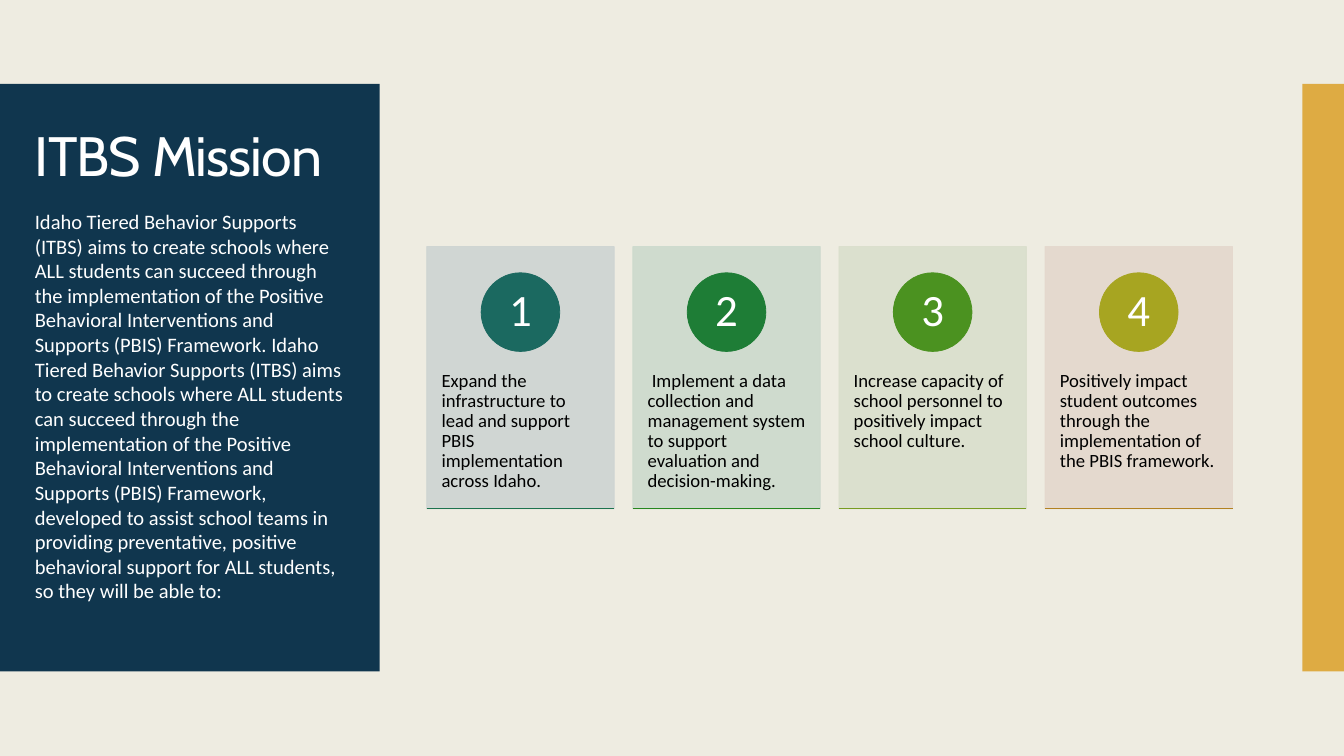
from dataclasses import dataclass

from lxml import etree
from pptx import Presentation
from pptx.dml.color import RGBColor
from pptx.enum.shapes import MSO_CONNECTOR, MSO_SHAPE
from pptx.enum.text import MSO_ANCHOR, PP_ALIGN
from pptx.oxml.ns import qn
from pptx.util import Inches, Pt

RECT, OVAL = MSO_SHAPE.RECTANGLE, MSO_SHAPE.OVAL
LINE = MSO_CONNECTOR.STRAIGHT
TOP, MID, LOW = MSO_ANCHOR.TOP, MSO_ANCHOR.MIDDLE, MSO_ANCHOR.BOTTOM
LEFT, MIDDLE = PP_ALIGN.LEFT, PP_ALIGN.CENTER

WIDE, HIGH = 20, 11.25
HEX = {"paper": "EEECE1", "navy": "10364E", "gold": "DEAB43",
       "white": "FFFFFF", "black": "000000"}

# Card grid: one row of equal columns
START, STEP, CARD_W = 6.35, 3.067, 2.79
CARD_Y, CARD_H = 3.67, 3.9
DISC, LABEL = 1.17, 0.83


@dataclass
class Box:
    x: float
    y: float
    w: float
    h: float

    def emu(self) -> list:
        return [Inches(n) for n in (self.x, self.y, self.w, self.h)]


@dataclass
class Font:
    size: float
    color: str
    face: str = "Calibri"


@dataclass
class Card:
    text: str
    back: str
    disc: str
    rule: str


CARDS = [
    Card("Expand the infrastructure to lead and support PBIS implementation "
         "across Idaho.", "CDD4D2", "1B6960", "1C734E"),
    Card(" Implement a data collection and management system to support "
         "evaluation and decision-making.", "CCDACD", "1E7D36", "26871F"),
    Card("Increase capacity of school personnel to positively impact school "
         "culture.", "DADFCC", "4B9220", "779C21"),
    Card("Positively impact student outcomes through the implementation of "
         "the PBIS framework.", "E4D8CD", "A7A521", "B28222"),
]

AIM = ("Idaho Tiered Behavior Supports (ITBS) aims to create schools where "
       "ALL students can succeed through the implementation of the Positive "
       "Behavioral Interventions and Supports (PBIS) Framework")
BODY = (f"{AIM}. {AIM}, developed to assist school teams in providing "
        "preventative, positive behavioral support for ALL students, so they "
        "will be able to: ")


def rgb(code: str) -> RGBColor:
    return RGBColor.from_string(code)


def draw_shape(slide, kind, box: Box, color: str, edge=False, alpha=100):
    shape = slide.shapes.add_shape(kind, *box.emu())
    shape.shadow.inherit = False
    shape.fill.solid()
    shape.fill.fore_color.rgb = rgb(color)
    if edge:
        shape.line.color.rgb = rgb(color)
        shape.line.width = Pt(0.85)
    else:
        shape.line.fill.background()
    if alpha < 100:
        for tint in shape._element.spPr.iter(qn("a:srgbClr")):
            etree.SubElement(tint, qn("a:alpha"), val=str(alpha * 1000))


def draw_rule(slide, x: float, y: float, w: float, color: str):
    rule = slide.shapes.add_connector(
        LINE, Inches(x), Inches(y), Inches(x + w), Inches(y))
    rule.line.color.rgb = rgb(color)
    rule.line.width = Pt(0.85)
    etree.SubElement(rule._element.spPr, qn("a:effectLst"))


def draw_text(slide, box: Box, text: str, font: Font, pad=(0.1, 0.05),
              anchor=TOP, align=LEFT, lead=0.9, track=0):
    frame = slide.shapes.add_textbox(*box.emu()).text_frame
    frame.word_wrap = True
    frame.vertical_anchor = anchor
    frame.margin_left = frame.margin_right = Inches(pad[0])
    frame.margin_top = frame.margin_bottom = Inches(pad[1])
    frame.text = text
    para = frame.paragraphs[0]
    para.alignment = align
    para.line_spacing = lead
    for run in para.runs:
        run.font.size = Pt(font.size)
        run.font.name = font.face
        run.font.color.rgb = rgb(font.color)
        if track:
            run.font._element.set("spc", str(track))


def draw_card(slide, index: int, card: Card):
    x = START + index * STEP
    mid = x + CARD_W / 2
    draw_shape(slide, RECT, Box(x, CARD_Y, CARD_W, CARD_H), card.back,
               edge=True, alpha=90)
    draw_text(slide, Box(x, CARD_Y + 0.382 * CARD_H, CARD_W, 0.6 * CARD_H),
              card.text, Font(20, HEX["black"]), pad=(0.22, 0.36))
    # Numbered disc, its label centred inside
    disc_y = CARD_Y + 0.1 * CARD_H
    draw_shape(slide, OVAL, Box(mid - DISC / 2, disc_y, DISC, DISC),
               card.disc, edge=True)
    draw_text(slide, Box(mid - LABEL / 2, disc_y + (DISC - LABEL) / 2,
                         LABEL, LABEL),
              str(index + 1), Font(48, HEX["white"]), pad=(0.09, 0.01),
              anchor=MID, align=MIDDLE)
    draw_rule(slide, x, CARD_Y + CARD_H, CARD_W, card.rule)


def main():
    deck = Presentation()
    deck.slide_width, deck.slide_height = Inches(WIDE), Inches(HIGH)
    slide = deck.slides.add_slide(deck.slide_layouts[6])
    slide.background.fill.solid()
    slide.background.fill.fore_color.rgb = rgb(HEX["paper"])

    # Side panels
    band_y, band_h = HIGH / 9, 8.74
    draw_shape(slide, RECT, Box(0, band_y, 5.65, band_h), HEX["navy"])
    draw_shape(slide, RECT, Box(19.38, band_y, WIDE - 19.38, band_h),
               HEX["gold"])

    # Title, cards and mission text
    draw_text(slide, Box(0.42, 1.88, 4.58, 0.98), "ITBS Mission",
              Font(59.4, HEX["white"], "Cabin"), anchor=LOW, track=-90)
    for index, card in enumerate(CARDS):
        draw_card(slide, index, card)
    draw_text(slide, Box(0.42, 3.06, 4.81, 6.48), BODY,
              Font(22, HEX["white"]), lead=1.0)

    deck.save("out.pptx")


if __name__ == "__main__":
    main()
